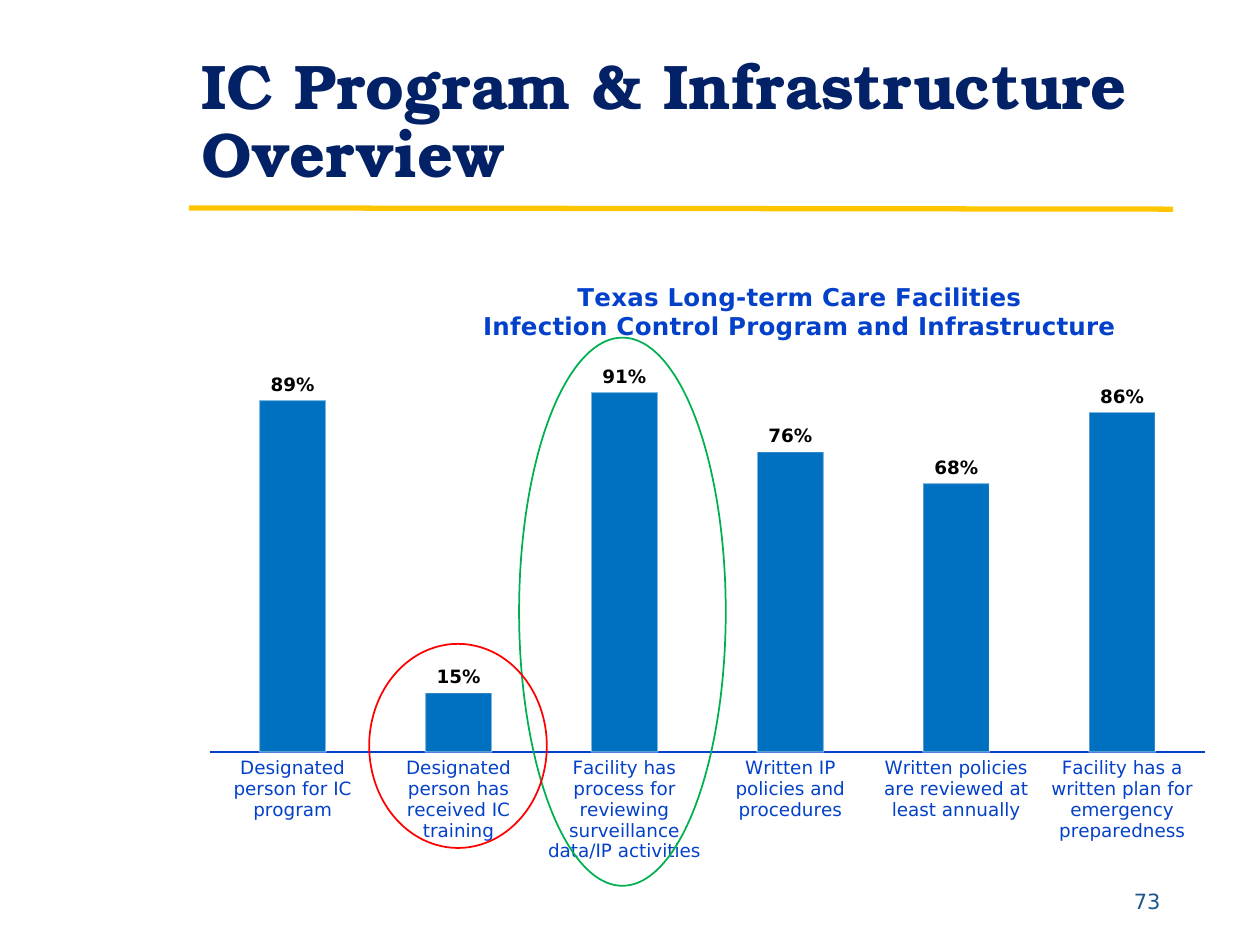
from lxml import etree
from pptx import Presentation
from pptx.chart.data import CategoryChartData
from pptx.dml.color import RGBColor
from pptx.enum import chart as ch, shapes, text
from pptx.oxml.ns import qn
from pptx.util import Pt

NAVY = RGBColor(0x02, 0x21, 0x67)
BLUE = RGBColor(0x04, 0x41, 0xCA)
BAR_BLUE = RGBColor(0x00, 0x70, 0xC0)
PAGE_BLUE = RGBColor(0x1A, 0x57, 0x8E)
GOLD = RGBColor(0xFF, 0xC6, 0x00)
GREEN = RGBColor(0x00, 0xB0, 0x50)
RED = RGBColor(0xFF, 0x00, 0x00)
BLACK = RGBColor(0, 0, 0)
WHITE = RGBColor(0xFF, 0xFF, 0xFF)

HEADING_FONT = "TeX Gyre Bonum"
BODY_FONT = "DejaVu Sans"

CHART_TITLE = ["Texas Long-term Care Facilities",
               "Infection Control Program and Infrastructure"]
FACILITY_SHARES = {
    "Designated person for IC program": 0.89,
    "Designated person has received IC training": 0.15,
    "Facility has process for reviewing surveillance data/IP activities": 0.91,
    "Written IP policies and procedures": 0.76,
    "Written policies are reviewed at least annually": 0.68,
    "Facility has a written plan for emergency preparedness": 0.86,
}


def format_font(font, size, color, name=BODY_FONT, bold=False):
    font.size = Pt(size)
    font.name = name
    font.bold = bold
    font.color.rgb = color


def write_text(frame, lines, align=text.PP_ALIGN.LEFT,
               anchor=text.MSO_ANCHOR.MIDDLE, spacing=1.0, **font_format):
    frame.word_wrap = True
    frame.auto_size = text.MSO_AUTO_SIZE.NONE
    frame.vertical_anchor = anchor
    for index, line in enumerate(lines):
        paragraph = frame.paragraphs[0] if index == 0 else frame.add_paragraph()
        paragraph.alignment = align
        paragraph.line_spacing = spacing
        run = paragraph.add_run()
        run.text = line
        format_font(run.font, **font_format)


def add_title(slide, title):
    shape = slide.shapes.title
    shape.left, shape.top, shape.width, shape.height = Pt(108), Pt(8.64), Pt(561.6), Pt(104.4)
    write_text(shape.text_frame, [title], anchor=text.MSO_ANCHOR.BOTTOM, spacing=0.9,
               size=36, color=NAVY, name=HEADING_FONT, bold=True)


def add_rule(slide, left, top, right, bottom):
    rule = slide.shapes.add_connector(
        shapes.MSO_CONNECTOR.STRAIGHT, Pt(left), Pt(top), Pt(right), Pt(bottom))
    rule.line.color.rgb = GOLD
    rule.line.width = Pt(3)
    etree.SubElement(rule._element.spPr, qn("a:effectLst"))


def add_page_number(slide, number):
    box = slide.shapes.add_textbox(Pt(576), Pt(500.4), Pt(94.32), Pt(28.8))
    write_text(box.text_frame, [number], align=text.PP_ALIGN.RIGHT,
               size=12, color=PAGE_BLUE)


def add_ring(slide, left, top, width, height, color):
    ring = slide.shapes.add_shape(
        shapes.MSO_SHAPE.OVAL, Pt(left), Pt(top), Pt(width), Pt(height))
    ring.shadow.inherit = False
    ring.fill.background()
    ring.line.color.rgb = color
    ring.line.width = Pt(1)


def place_in_chart(element, **values):
    """Set a manual layout; x, y, w and h are fractions of the chart."""
    layout = element.find(qn("c:layout"))
    if layout is None:
        layout = etree.Element(qn("c:layout"))
        element.insert(0, layout)
    manual = etree.SubElement(layout, qn("c:manualLayout"))
    if "w" in values:
        etree.SubElement(manual, qn("c:layoutTarget")).set("val", "inner")
    for axis in ("x", "y"):
        etree.SubElement(manual, qn(f"c:{axis}Mode")).set("val", "edge")
    for key, value in values.items():
        etree.SubElement(manual, qn(f"c:{key}")).set("val", str(value))


def format_axes(chart):
    category_axis = chart.category_axis
    category_axis.major_tick_mark = ch.XL_TICK_MARK.NONE
    category_axis.format.line.color.rgb = BLUE
    category_axis.format.line.width = Pt(1.5)
    format_font(category_axis.tick_labels.font, 10.5, BLUE)
    value_axis = chart.value_axis
    value_axis.minimum_scale, value_axis.maximum_scale = 0, 1
    value_axis.has_major_gridlines = False
    value_axis.visible = False
    value_axis.tick_labels.number_format = "0%"
    value_axis.tick_labels.number_format_is_linked = False


def format_bars(plot):
    plot.gap_width = 150
    plot.overlap = -25
    plot.vary_by_categories = False
    series = plot.series[0]
    series.format.fill.solid()
    series.format.fill.fore_color.rgb = BAR_BLUE
    line = series.format.line
    line.color.rgb = WHITE
    line.width = Pt(0.75)
    line_color = series._element.find(f".//{qn('a:ln')}//{qn('a:srgbClr')}")
    etree.SubElement(line_color, qn("a:alpha")).set("val", "50000")
    labels = series.data_labels
    labels.show_value = True
    labels.number_format = "0%"
    labels.number_format_is_linked = False
    labels.position = ch.XL_LABEL_POSITION.OUTSIDE_END
    format_font(labels.font, 10.5, BLACK, bold=True)


def add_share_chart(slide):
    data = CategoryChartData(number_format="0%")
    data.categories = list(FACILITY_SHARES)
    data.add_series("Series 1", list(FACILITY_SHARES.values()))
    chart = slide.shapes.add_chart(
        ch.XL_CHART_TYPE.COLUMN_CLUSTERED,
        Pt(108), Pt(147.6), Pt(592.56), Pt(352.8), data).chart
    format_font(chart.font, 10, NAVY)
    chart.has_legend = False
    chart.has_title = True
    write_text(chart.chart_title.text_frame, CHART_TITLE,
               align=text.PP_ALIGN.CENTER, size=14, color=BLUE, bold=True)
    place_in_chart(chart.chart_title._element, x=0.28, y=0.03)
    place_in_chart(chart._chartSpace.chart.plotArea, x=0.02, y=0.16, w=0.96, h=0.64)
    format_axes(chart)
    format_bars(chart.plots[0])


def main():
    presentation = Presentation()
    presentation.slide_width, presentation.slide_height = Pt(720), Pt(540)
    slide = presentation.slides.add_slide(presentation.slide_layouts[5])
    add_rule(slide, 108, 118.8, 670.32, 119.52)
    add_title(slide, "IC Program & Infrastructure Overview")
    add_page_number(slide, "73")
    add_share_chart(slide)
    add_ring(slide, 296.64, 192.96, 118.08, 313.2, GREEN)
    add_ring(slide, 210.96, 367.92, 101.52, 116.64, RED)
    presentation.save("out.pptx")


if __name__ == "__main__":
    main()
